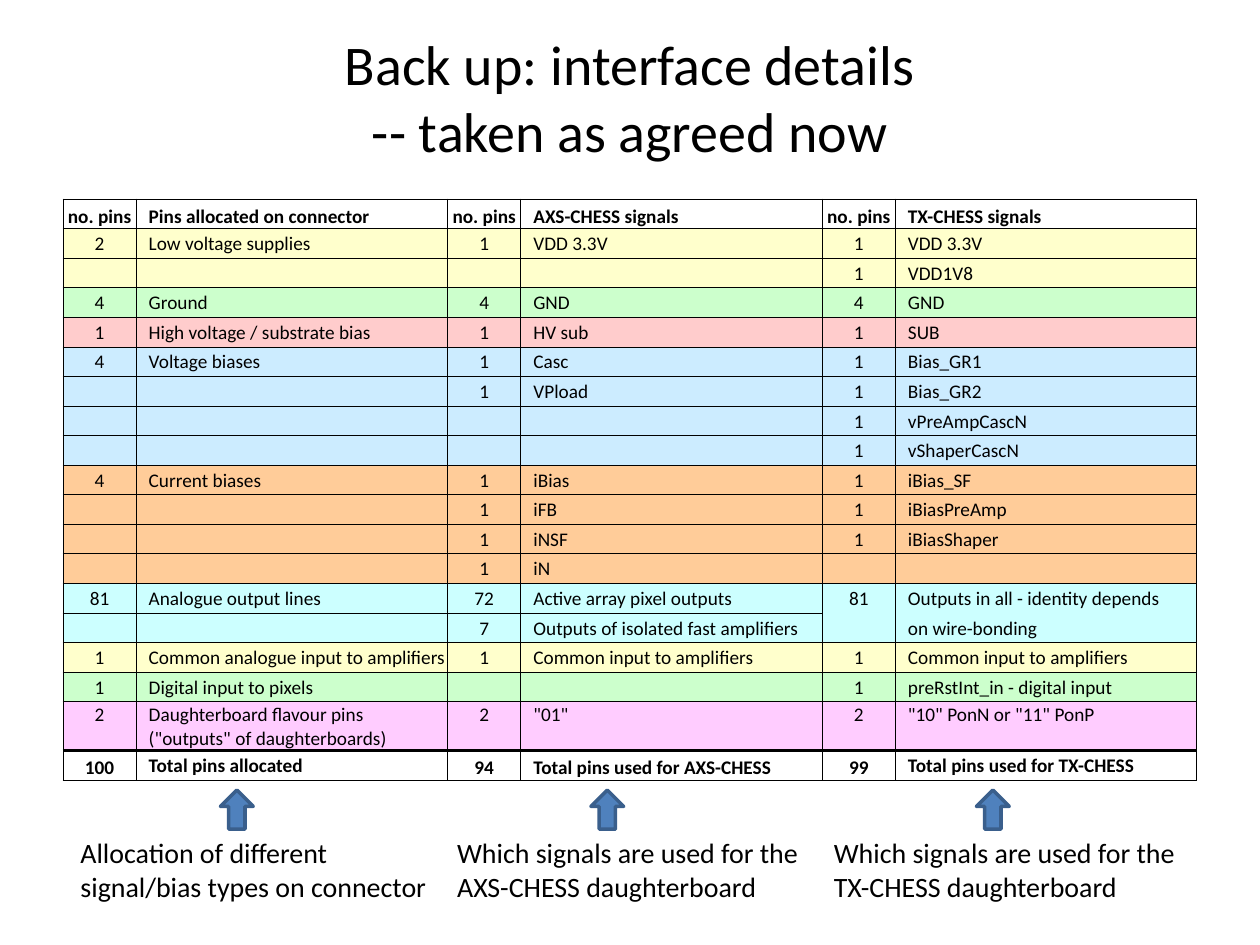
import dataclasses

import lxml.etree
import pptx
import pptx.dml.color
import pptx.enum.shapes
import pptx.enum.text
import pptx.oxml.ns
import pptx.util

Inches = pptx.util.Inches
Pt = pptx.util.Pt
Align = pptx.enum.text.PP_ALIGN
Anchor = pptx.enum.text.MSO_ANCHOR
Shape = pptx.enum.shapes.MSO_SHAPE


@dataclasses.dataclass(frozen=True)
class Theme:
    """Hold the colours, font and type sizes."""

    font: str = "Calibri"
    ink: str = "000000"
    white: str = "FFFFFF"
    yellow: str = "FFFFCC"
    green: str = "CCFFCC"
    red: str = "FFCCCC"
    blue: str = "CCECFF"
    orange: str = "FFCC99"
    cyan: str = "CCFFFF"
    pink: str = "FFCCFF"
    arrow: str = "4F81BD"
    edge: str = "3A5F8C"
    head: int = 32
    note: int = 16
    cell: int = 11
    thin: float = 0.5
    thick: float = 2


THEME = Theme()
WIDTHS = (0.58, 2.47, 0.58, 2.39, 0.58, 2.39)
SPLIT = 14
FLAVOUR = 17
TOTAL = 18
ROWS = (
    (THEME.white, "no. pins", "Pins allocated on connector",
     "no. pins", "AXS-CHESS signals", "no. pins", "TX-CHESS signals"),
    (THEME.yellow, "2", "Low voltage supplies", "1", "VDD 3.3V", "1", "VDD 3.3V"),
    (THEME.yellow, "", "", "", "", "1", "VDD1V8"),
    (THEME.green, "4", "Ground", "4", "GND", "4", "GND"),
    (THEME.red, "1", "High voltage / substrate bias", "1", "HV sub", "1", "SUB"),
    (THEME.blue, "4", "Voltage biases", "1", "Casc", "1", "Bias_GR1"),
    (THEME.blue, "", "", "1", "VPload", "1", "Bias_GR2"),
    (THEME.blue, "", "", "", "", "1", "vPreAmpCascN"),
    (THEME.blue, "", "", "", "", "1", "vShaperCascN"),
    (THEME.orange, "4", "Current biases", "1", "iBias", "1", "iBias_SF"),
    (THEME.orange, "", "", "1", "iFB", "1", "iBiasPreAmp"),
    (THEME.orange, "", "", "1", "iNSF", "1", "iBiasShaper"),
    (THEME.orange, "", "", "1", "iN", "", ""),
    (THEME.cyan, "81", "Analogue output lines", "72", "Active array pixel outputs",
     "81", "Outputs in all - identity depends"),
    (THEME.cyan, "", "", "7", "Outputs of isolated fast amplifiers",
     "", "on wire-bonding"),
    (THEME.yellow, "1", "Common analogue input to amplifiers",
     "1", "Common input to amplifiers", "1", "Common input to amplifiers"),
    (THEME.green, "1", "Digital input to pixels", "", "",
     "1", "preRstInt_in - digital input"),
    (THEME.pink, "2", 'Daughterboard flavour pins\v("outputs" of daughterboards)',
     "2", '"01"', "2", '"10" PonN or "11" PonP'),
    (THEME.white, "100", "Total pins allocated", "94", "Total pins used for AXS-CHESS",
     "99", "Total pins used for TX-CHESS"),
)
NOTES = (
    ("Allocation of different signal/bias types on connector", 1.75),
    ("Which signals are used for the AXS-CHESS daughterboard", 4.69),
    ("Which signals are used for the TX-CHESS daughterboard", 7.75),
)


def paint(fill, tone):
    """Give a fill one solid colour."""
    fill.solid()
    fill.fore_color.rgb = pptx.dml.color.RGBColor.from_string(tone)


def write(frame, text, size, bold=False, align=Align.LEFT, anchor=Anchor.MIDDLE):
    """Put formatted text into a frame."""
    frame.word_wrap = True
    frame.vertical_anchor = anchor
    para = frame.paragraphs[0]
    para.text = text
    para.alignment = align
    for run in para.runs:
        run.font.name = THEME.font
        run.font.size = Pt(size)
        run.font.bold = bold
        paint(run.font.fill, THEME.ink)
    if not text:
        tag = pptx.oxml.ns.qn("a:endParaRPr")
        lxml.etree.SubElement(para._p, tag, sz=str(size * 100))


def rule(cell, side, width):
    """Draw one cell border, or none at zero width."""
    name = pptx.oxml.ns.qn
    props = cell._tc.get_or_add_tcPr()
    line = lxml.etree.SubElement(props, name("a:ln" + side), w=str(Pt(width)))
    if width:
        fill = lxml.etree.SubElement(line, name("a:solidFill"))
        lxml.etree.SubElement(fill, name("a:srgbClr"), val=THEME.ink)
    else:
        lxml.etree.SubElement(line, name("a:noFill"))


def border(cell, row, col):
    """Draw the four borders of a cell by its place."""
    edges = {FLAVOUR + 1: THEME.thick}
    if col >= 4:
        edges[SPLIT] = 0
    rule(cell, "L", THEME.thin)
    rule(cell, "R", THEME.thin)
    rule(cell, "T", edges.get(row, THEME.thin))
    rule(cell, "B", edges.get(row + 1, THEME.thin))


def place(row, col):
    """Return the vertical anchor for a table cell."""
    if row == FLAVOUR:
        return Anchor.TOP
    if row == 0 or row == TOTAL and col not in (1, 5):
        return Anchor.BOTTOM
    return Anchor.MIDDLE


def add_title(slide, left, top, width, height):
    """Set the slide title in its box."""
    title = slide.shapes.title
    title.left, title.top, title.width, title.height = left, top, width, height
    write(title.text_frame, "Back up: interface details\v-- taken as agreed now",
          THEME.head, align=Align.CENTER)


def add_pins(slide, left, top, width, height):
    """Build the pin table in its box."""
    frame = slide.shapes.add_table(len(ROWS), len(WIDTHS), left, top, width, height)
    table = frame.table
    table.first_row = table.horz_banding = False
    for col, size in enumerate(WIDTHS):
        table.columns[col].width = int(width * size / sum(WIDTHS))
    tall = Inches(0.38)
    for row, (tone, *texts) in enumerate(ROWS):
        small = (height - tall) // (len(ROWS) - 1)
        table.rows[row].height = tall if row == FLAVOUR else small
        for col, text in enumerate(texts):
            cell = table.cell(row, col)
            count = col % 2 == 0
            cell.margin_left = Inches(0.01 if count else 0.1)
            cell.margin_right = cell.margin_top = Inches(0.01)
            cell.margin_bottom = 0
            write(cell.text_frame, text, THEME.cell, bold=row in (0, TOTAL),
                  align=Align.CENTER if count else Align.LEFT)
            cell.vertical_anchor = place(row, col)
            border(cell, row, col)
            paint(cell.fill, tone)


def add_notes(slide, left, top, width, height):
    """Set the three captions and their arrows in the box."""
    step = width // len(NOTES)
    for index, (text, spot) in enumerate(NOTES):
        box = slide.shapes.add_textbox(left + index * step, top, step, height)
        write(box.text_frame, text, THEME.note)
        arrow = slide.shapes.add_shape(Shape.UP_ARROW, Inches(spot),
                                       top - Inches(0.08), Inches(0.26), Inches(0.31))
        arrow.shadow.inherit = False
        paint(arrow.fill, THEME.arrow)
        paint(arrow.line.fill, THEME.edge)
        arrow.line.width = Pt(THEME.thick)


def main():
    """Build and save the deck."""
    deck = pptx.Presentation()
    deck.slide_width, deck.slide_height = Inches(10), Inches(7.5)
    slide = deck.slides.add_slide(deck.slide_layouts.get_by_name("Title Only"))
    add_title(slide, Inches(0.5), Inches(0.14), Inches(9), Inches(1.25))
    add_pins(slide, Inches(0.5), Inches(1.58), Inches(9), Inches(4.61))
    add_notes(slide, Inches(0.54), Inches(6.35), Inches(8.97), Inches(1.1))
    deck.save("out.pptx")


if __name__ == "__main__":
    main()
